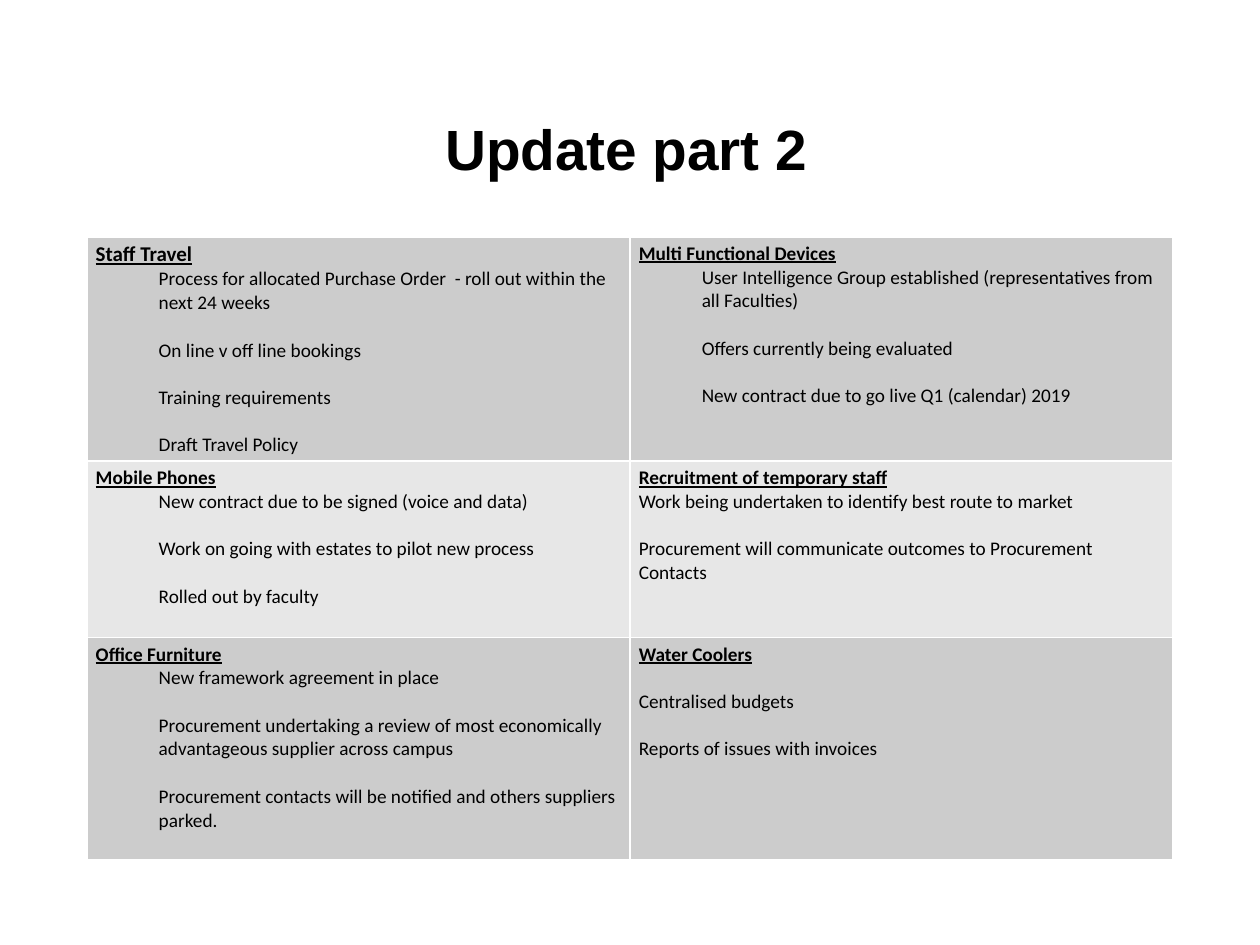
"""Build the procurement update slide with its topic table."""
import pptx
import pptx.dml.color
import pptx.enum.text
import pptx.oxml
import pptx.oxml.ns
import pptx.util
from pptx.util import Inches

ROW_HEIGHTS = [1.78, 1.4, 1.76]
ROW_FILLS = ["CCCCCC", "E7E7E7", "CCCCCC"]
COLUMN_WIDTH = 4.31
LINE_GAP = 13.5

# Each topic: heading, heading size, indent, space before the first item, items
TOPICS = [
    [
        ("Staff Travel", 12, 0.5, 0, [
            "Process for allocated Purchase Order  - roll out within the next 24 weeks",
            "On line v off line bookings",
            "Training requirements",
            "Draft Travel Policy",
        ]),
        ("Multi Functional Devices", 11, 0.5, 0, [
            "User Intelligence Group established (representatives from all Faculties)",
            "Offers currently being evaluated",
            "New contract due to go live Q1 (calendar) 2019",
        ]),
    ],
    [
        ("Mobile Phones", 11, 0.5, 0, [
            "New contract due to be signed (voice and data)",
            "Work on going with estates to pilot new process",
            "Rolled out by faculty",
        ]),
        ("Recruitment of temporary staff", 11, 0, 0, [
            "Work being undertaken to identify best route to market",
            "Procurement will communicate outcomes to Procurement Contacts",
        ]),
    ],
    [
        ("Office Furniture", 11, 0.5, 0, [
            "New framework agreement in place",
            "Procurement undertaking a review of most economically advantageous supplier across campus",
            "Procurement contacts will be notified and others suppliers parked.",
        ]),
        ("Water Coolers", 11, 0, LINE_GAP, [
            "Centralised budgets",
            "Reports of issues with invoices",
        ]),
    ],
]


def color(value):
    """Return the colour for a hex string."""
    return pptx.dml.color.RGBColor.from_string(value)


def format_runs(paragraph, font_name, size, bold=False, underline=False):
    """Format every run of a paragraph."""
    for run in paragraph.runs:
        run.font.name = font_name
        run.font.size = pptx.util.Pt(size)
        run.font.bold = bold
        run.font.underline = underline
        run.font.color.rgb = color("000000")


def add_title(slide, text):
    """Add the centred slide title."""
    shape = slide.shapes.add_textbox(Inches(0.66), Inches(0.84), Inches(8.62), Inches(0.65))
    text_frame = shape.text_frame
    text_frame.word_wrap = True
    text_frame.vertical_anchor = pptx.enum.text.MSO_ANCHOR.BOTTOM
    text_frame.text = text
    paragraph = text_frame.paragraphs[0]
    paragraph.alignment = pptx.enum.text.PP_ALIGN.CENTER
    format_runs(paragraph, "Arial", 32.4, bold=True)


def set_borders(cell, value, width):
    """Give a cell the same solid line on all four sides."""
    properties = cell._tc.get_or_add_tcPr()
    for index, side in enumerate(("lnL", "lnR", "lnT", "lnB")):
        line = pptx.oxml.parse_xml(
            f'<a:{side} {pptx.oxml.ns.nsdecls("a")} w="{pptx.util.Pt(width)}">'
            f'<a:solidFill><a:srgbClr val="{value}"/></a:solidFill></a:{side}>'
        )
        properties.insert(index, line)


def fill_cell(cell, topic, fill):
    """Write one topic into a table cell."""
    heading, heading_size, indent, first_gap, items = topic
    cell.fill.solid()
    cell.fill.fore_color.rgb = color(fill)
    set_borders(cell, "FFFFFF", 1)
    cell.margin_left = cell.margin_right = Inches(0.07)
    cell.margin_top = cell.margin_bottom = Inches(0.04)
    cell.text_frame.text = heading
    format_runs(cell.text_frame.paragraphs[0], "Calibri", heading_size, bold=True, underline=True)
    for index, item in enumerate(items):
        paragraph = cell.text_frame.add_paragraph()
        paragraph.text = item
        paragraph.space_before = pptx.util.Pt(LINE_GAP if index else first_gap)
        if indent:
            paragraph.level = 1
            properties = paragraph._p.get_or_add_pPr()
            properties.set("marL", str(Inches(indent)))
            properties.set("indent", "0")
        format_runs(paragraph, "Calibri", 11)


def add_topic_table(slide):
    """Add the table of procurement topics."""
    column_count = len(TOPICS[0])
    table = slide.shapes.add_table(
        len(TOPICS), column_count, Inches(0.69), Inches(1.88),
        Inches(COLUMN_WIDTH * column_count), Inches(sum(ROW_HEIGHTS)),
    ).table
    for column in table.columns:
        column.width = Inches(COLUMN_WIDTH)
    for row, height, topics, fill in zip(table.rows, ROW_HEIGHTS, TOPICS, ROW_FILLS):
        row.height = Inches(height)
        for cell, topic in zip(row.cells, topics):
            fill_cell(cell, topic, fill)


def main():
    """Create and save the presentation."""
    presentation = pptx.Presentation()
    presentation.slide_width = Inches(10)
    presentation.slide_height = Inches(7.5)
    slide = presentation.slides.add_slide(presentation.slide_layouts[6])
    add_title(slide, "Update part 2")
    add_topic_table(slide)
    presentation.save("out.pptx")


if __name__ == "__main__":
    main()
